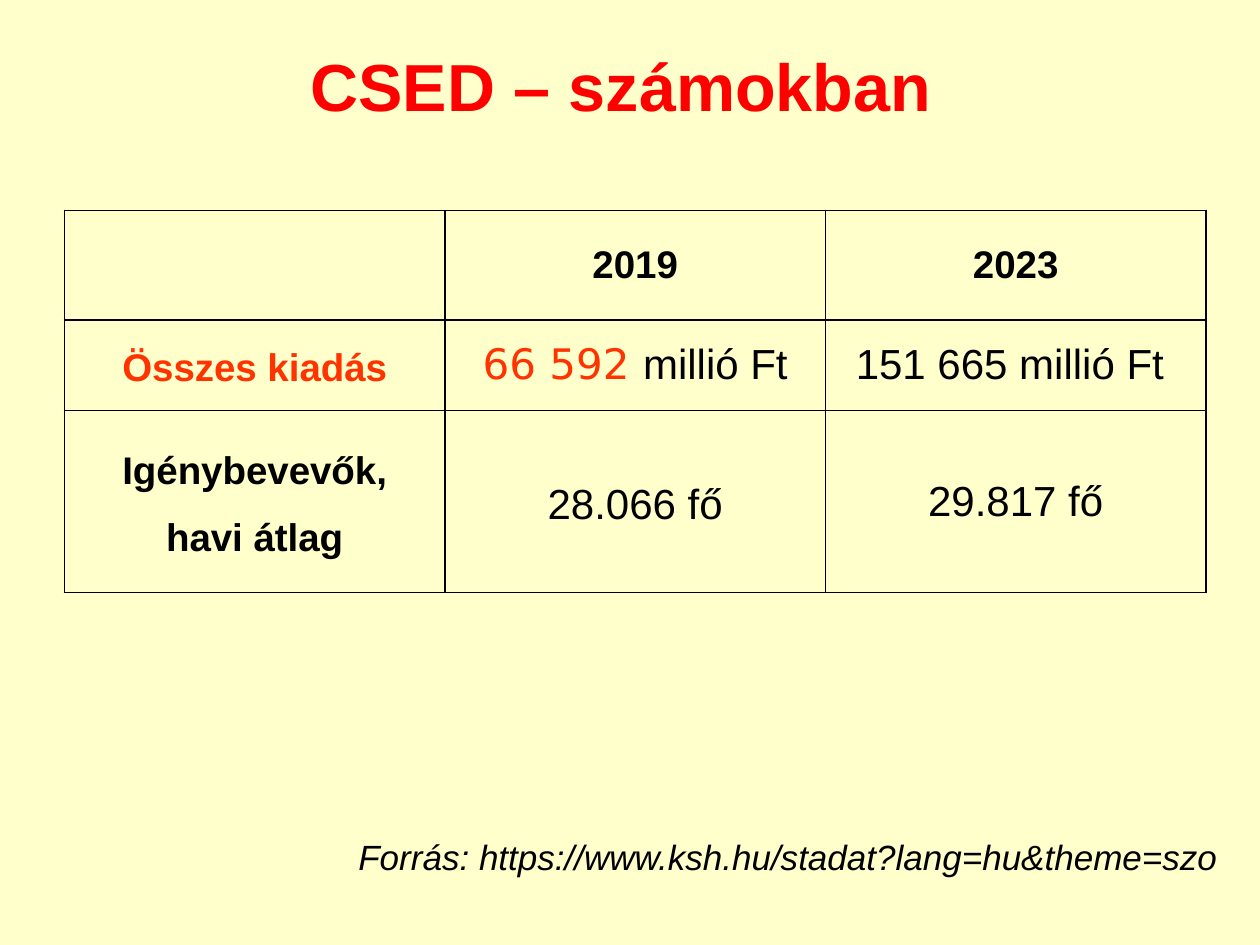
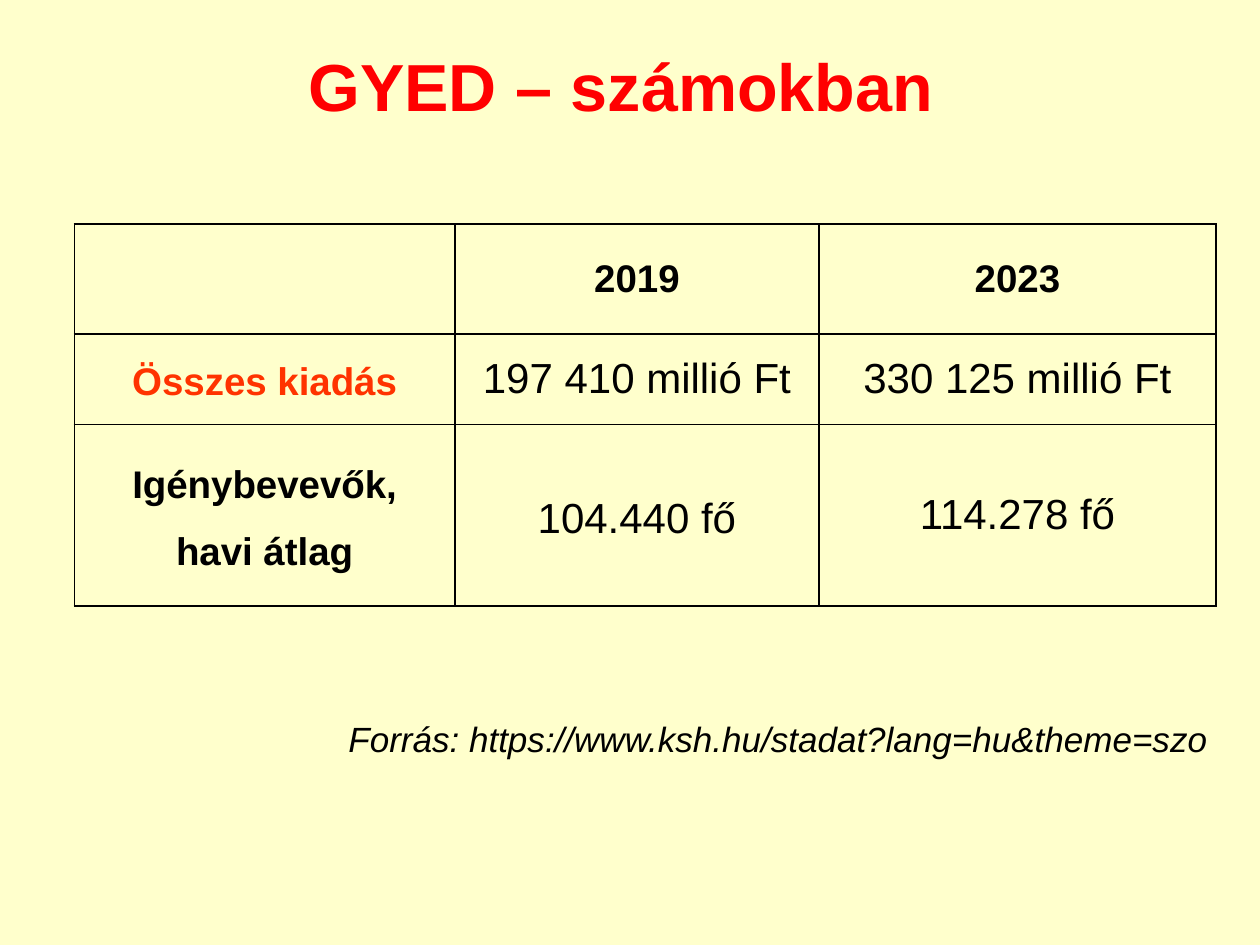
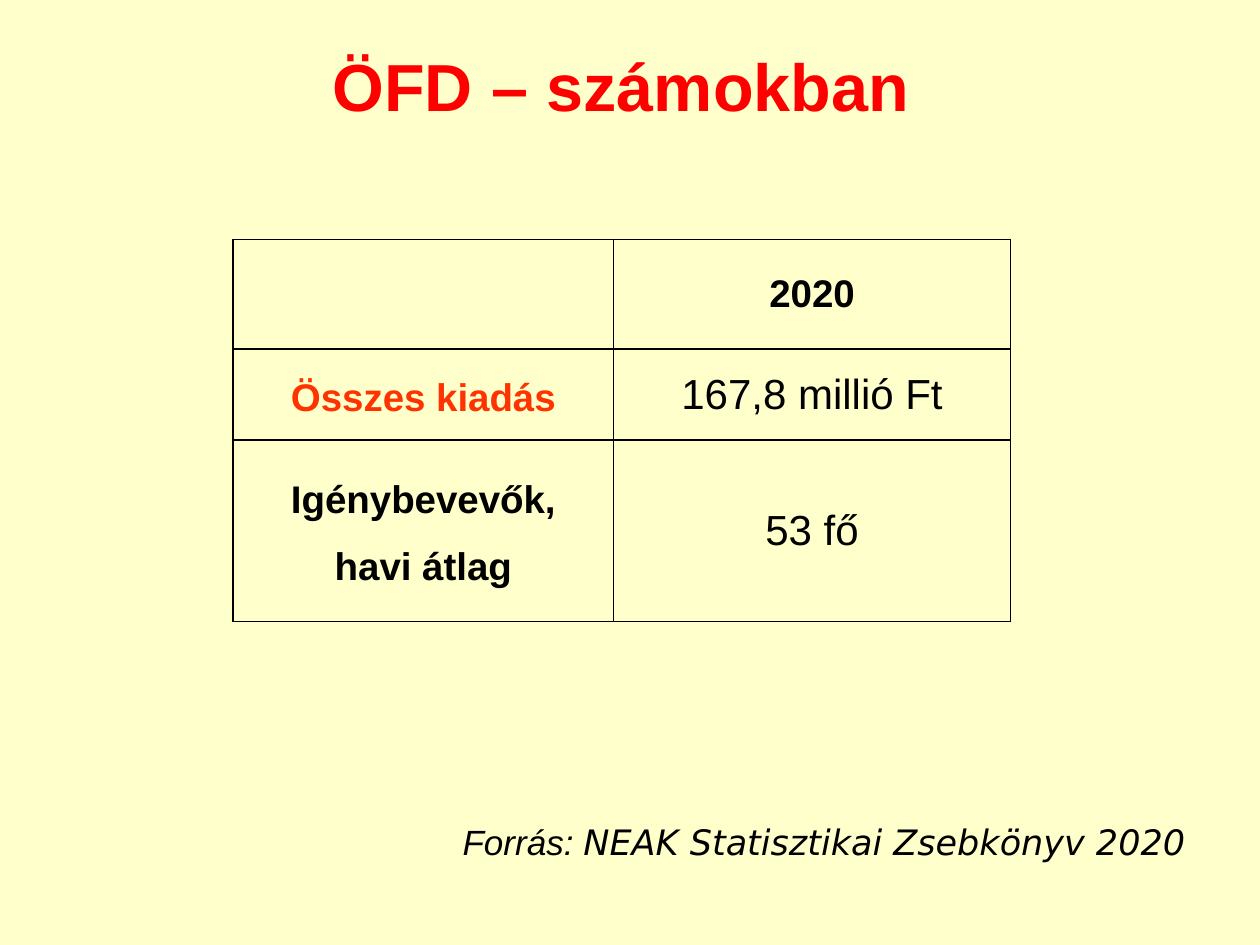
from lxml.etree import SubElement
from pptx import Presentation
from pptx.dml.color import RGBColor
from pptx.enum.text import MSO_ANCHOR, PP_ALIGN
from pptx.oxml.ns import qn
from pptx.util import Cm, Pt

BACKGROUND, TITLE, ACCENT, INK = "FFFFCC", "FF0000", "FF3300", "000000"
SANS, WIDE = "Arial", "DejaVu Sans"
ROW_HEIGHTS = [2.21, 1.83, 3.66]
HEADING = dict(size=22, bold=True)
LABEL = dict(size=22, bold=True, spaced=True)
VALUE = dict(size=24)
SPACED_VALUE = dict(size=24, spaced=True)
WEB_SOURCE = ["Forrás: https://www.ksh.hu/stadat?lang=hu&theme=szo"]

SLIDES = [
    dict(
        title="CSED – számokban",
        table_at=(1.3, 4.24),
        columns=[7.67, 7.67, 7.67],
        years=["2019", "2023"],
        spending=[[("66 592 ", WIDE, ACCENT), "millió Ft"], ["151 665 millió Ft "]],
        people=[("28.066 fő", SPACED_VALUE), ("29.817 fő", VALUE)],
        source=WEB_SOURCE,
        source_at=(6.91, 16.71, 17.96, 1.12),
    ),
    dict(
        title="GYED – számokban",
        table_at=(1.5, 4.52),
        columns=[7.67, 7.34, 8],
        years=["2019", "2023"],
        spending=[["197 410 millió Ft"], ["330 125 millió Ft"]],
        people=[("104.440 fő", SPACED_VALUE), ("114.278 fő", VALUE)],
        source=WEB_SOURCE,
        source_at=(6.71, 14.33, 17.96, 1.12),
    ),
    dict(
        title="ÖFD – számokban",
        table_at=(4.7, 4.83),
        columns=[7.67, 8],
        years=["2020"],
        spending=[["167,8 millió Ft"]],
        people=[("53 fő", VALUE)],
        source=["Forrás: ", ("NEAK Statisztikai Zsebkönyv 2020", WIDE, INK)],
        source_at=(8.97, 16.41, 15.29, 1.12),
    ),
]


def color(value):
    return RGBColor.from_string(value)


def write(frame, lines, size, bold=False, italic=False, ink=INK, spaced=False):
    for index, spans in enumerate(lines):
        para = frame.add_paragraph() if index else frame.paragraphs[0]
        para.alignment = PP_ALIGN.CENTER
        if spaced:
            para.line_spacing = 1.15
            para.space_after = Pt(10)
        font = para.font
        font.size, font.bold, font.italic = Pt(size), bold, italic
        for item in spans:
            text, name, tint = (item, SANS, ink) if isinstance(item, str) else item
            span = para.add_run()
            span.text = text
            span.font.name = name
            span.font.color.rgb = color(tint)


def add_text(page, place, spans, wrap=True, **style):
    box = page.shapes.add_textbox(*map(Cm, place))
    frame = box.text_frame
    frame.word_wrap = wrap
    frame.vertical_anchor = MSO_ANCHOR.MIDDLE
    write(frame, [spans], **style)


def format_cell(cell):
    cell.vertical_anchor = MSO_ANCHOR.MIDDLE
    cell.margin_left = cell.margin_right = Cm(0.18)
    cell.margin_top = cell.margin_bottom = 0
    properties = cell._tc.get_or_add_tcPr()
    for side in ("lnL", "lnR", "lnT", "lnB"):
        line = SubElement(properties, qn(f"a:{side}"), w=str(Pt(1)))
        fill = SubElement(line, qn("a:solidFill"))
        SubElement(fill, qn("a:srgbClr"), val=INK)
    cell.fill.background()


def add_figures(page, content):
    columns = content["columns"]
    size = sum(columns), sum(ROW_HEIGHTS)
    place = map(Cm, content["table_at"] + size)
    table = page.shapes.add_table(len(ROW_HEIGHTS), len(columns), *place).table
    table.first_row = table.horz_banding = False
    for column, width in zip(table.columns, columns):
        column.width = Cm(width)
    for row, height in zip(table.rows, ROW_HEIGHTS):
        row.height = Cm(height)

    rows = [
        [([], HEADING)] + [([[year]], HEADING) for year in content["years"]],
        [([["Összes kiadás"]], dict(LABEL, ink=ACCENT))]
        + [([spans], VALUE) for spans in content["spending"]],
        [([["Igénybevevők,"], ["havi átlag"]], LABEL)]
        + [([[text]], style) for text, style in content["people"]],
    ]
    for row, entries in zip(table.rows, rows):
        for cell, (lines, style) in zip(row.cells, entries):
            format_cell(cell)
            write(cell.text_frame, lines, **style)


def main():
    deck = Presentation()
    deck.slide_width, deck.slide_height = Cm(25.4), Cm(19.05)
    for content in SLIDES:
        page = deck.slides.add_slide(deck.slide_layouts[6])
        page.background.fill.solid()
        page.background.fill.fore_color.rgb = color(BACKGROUND)
        add_text(page, (1.09, 0.51, 22.86, 2.41), [content["title"]],
                 size=38, bold=True, ink=TITLE)
        add_figures(page, content)
        add_text(page, content["source_at"], content["source"], wrap=False,
                 size=20, italic=True)
    deck.save("out.pptx")


if __name__ == "__main__":
    main()
